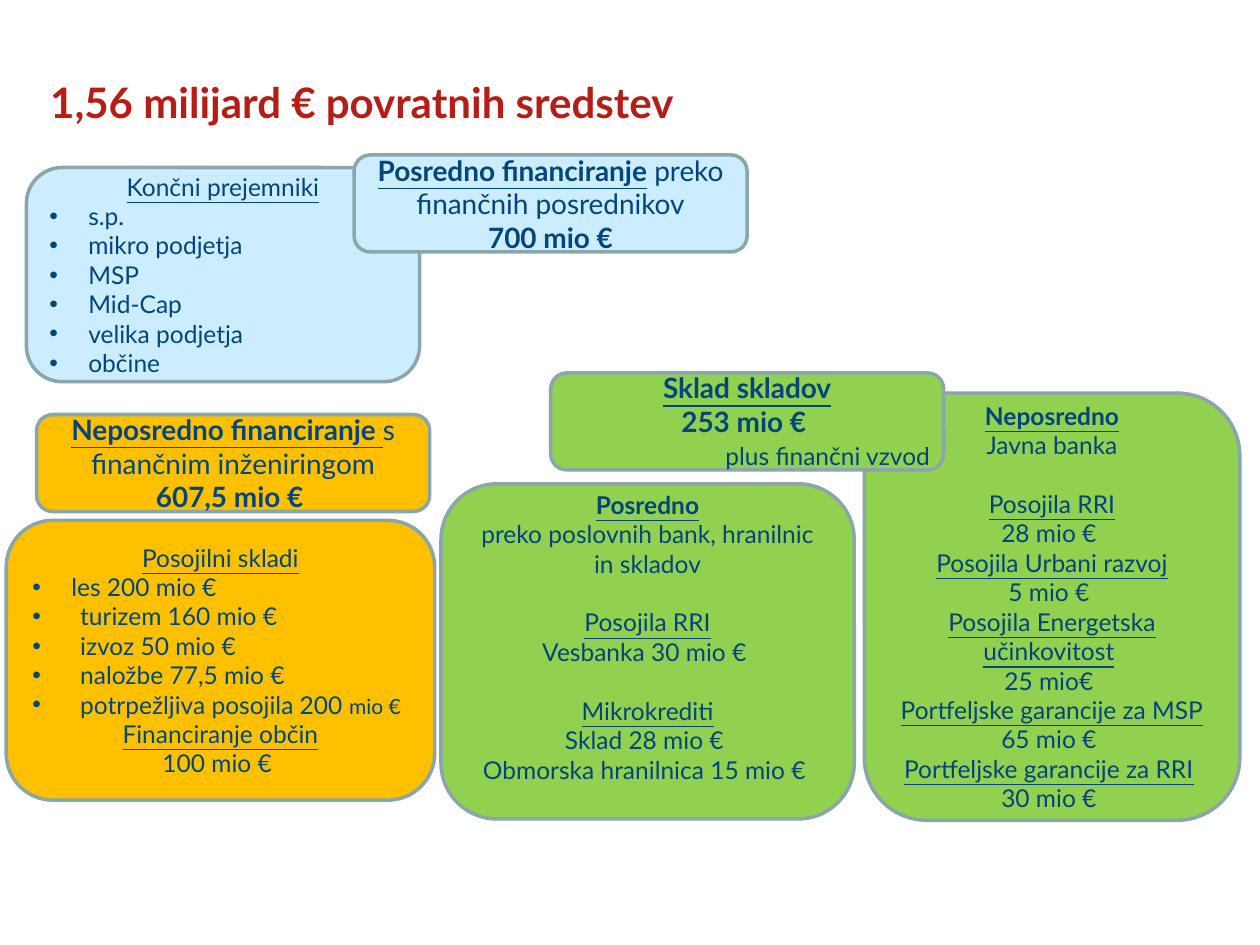
from dataclasses import dataclass

from lxml import etree
from pptx import Presentation
from pptx.dml.color import RGBColor
from pptx.enum.shapes import MSO_SHAPE
from pptx.enum.text import MSO_ANCHOR, PP_ALIGN
from pptx.oxml.ns import qn
from pptx.util import Inches, Pt

ROUNDED = MSO_SHAPE.ROUNDED_RECTANGLE
MIDDLE, TOP = MSO_ANCHOR.MIDDLE, MSO_ANCHOR.TOP
LEFT, CENTER = PP_ALIGN.LEFT, PP_ALIGN.CENTER

FONT = "Lato"
NAVY, RED, GREY = "00457C", "B51E17", "8AA6A8"
BLUE, ORANGE, GREEN = "CCECFF", "FFC000", "92D050"
BODY, HEAD = 14, 16
LINE_GAP = 1.2 * BODY
HEAD_W, HEAD_H = 3.12, 0.77


@dataclass
class Span:
    text: str
    bold: bool = False
    underline: bool = False
    size: int = 0


@dataclass
class Para:
    spans: list[Span]
    indent: float = 0
    before: float = 0


@dataclass
class Panel:
    left: float
    top: float
    width: float
    height: float
    fill: str
    size: int
    paras: list[Para]
    bottom_inset: float = 0.05


def rgb(value: str) -> RGBColor:
    return RGBColor.from_string(value)


def plain(text: str) -> Para:
    return Para([Span(text)])


def under(text: str, before: float = 0, bold: bool = False) -> Para:
    return Para([Span(text, bold, True)], before=before)


def strong(text: str) -> Para:
    return Para([Span(text, True)])


def bullets(items: list[str], indent: float) -> list[Para]:
    return [Para([Span(item)], indent) for item in items]


def add_bullet(p, indent: float) -> None:
    pPr = p._p.get_or_add_pPr()
    pPr.set("marL", str(Inches(indent)))
    pPr.set("indent", str(-Inches(indent)))
    etree.SubElement(pPr, qn("a:buFont")).set("typeface", "Arial")
    etree.SubElement(pPr, qn("a:buChar")).set("char", "•")


def write(tf, paras: list[Para], size: int, color: str = NAVY,
          align=CENTER, anchor=MIDDLE) -> None:
    """Fill a text frame; bulleted paragraphs are always left-aligned."""
    tf.word_wrap = True
    tf.vertical_anchor = anchor
    for i, para in enumerate(paras):
        p = tf.add_paragraph() if i else tf.paragraphs[0]
        p.alignment = LEFT if para.indent else align
        if para.before:
            p.space_before = Pt(para.before)
        if para.indent:
            add_bullet(p, para.indent)
        for span in para.spans:
            r = p.add_run()
            r.text = span.text
            r.font.name = FONT
            r.font.size = Pt(span.size or size)
            r.font.bold = span.bold
            r.font.underline = span.underline
            r.font.color.rgb = rgb(color)


def add_panel(s, panel: Panel) -> None:
    sp = s.shapes.add_shape(ROUNDED, Inches(panel.left), Inches(panel.top),
                            Inches(panel.width), Inches(panel.height))
    sp.shadow.inherit = False
    sp.fill.solid()
    sp.fill.fore_color.rgb = rgb(panel.fill)
    sp.line.color.rgb = rgb(GREY)
    sp.line.width = Pt(2)
    sp.text_frame.margin_bottom = Inches(panel.bottom_inset)
    write(sp.text_frame, panel.paras, panel.size)


def add_label(s, left: float, top: float, width: float, height: float,
              span: Span, color: str, anchor) -> None:
    sp = s.shapes.add_textbox(Inches(left), Inches(top), Inches(width), Inches(height))
    write(sp.text_frame, [Para([span])], span.size, color, LEFT, anchor)


PANELS = [
    Panel(0.29, 3.29, HEAD_W, HEAD_H, ORANGE, HEAD, [
        Para([Span("Neposredno financiranje ", True, True),
              Span("s finančnim inženiringom "),
              Span("607,5 mio € ", True)]),
    ]),
    Panel(0.05, 4.13, 3.4, 2.22, ORANGE, BODY, [
        under("Posojilni skladi"),
        *bullets(["les 200 mio €"], 0.31),
        *bullets(["turizem 160 mio €", "izvoz 50 mio €", "naložbe 77,5 mio €"], 0.38),
        Para([Span("potrpežljiva posojila 200 "), Span("mio €", size=12)], 0.38),
        under("Financiranje občin"),
        plain("100 mio € "),
    ]),
    Panel(0.21, 1.33, HEAD_W, 1.7, BLUE, BODY, [
        under("Končni prejemniki"),
        *bullets(["s.p.", "mikro podjetja", "MSP", "Mid-Cap",
                  "velika podjetja", "občine"], 0.31),
    ]),
    Panel(3.5, 3.84, 3.28, 2.66, GREEN, BODY, [
        under("Posredno", bold=True),
        plain("preko poslovnih bank, hranilnic in skladov"),
        under("Posojila RRI", LINE_GAP),
        plain("Vesbanka 30 mio € "),
        under("Mikrokrediti", LINE_GAP),
        plain("Sklad 28 mio € "),
        plain("Obmorska hranilnica 15 mio € "),
    ], bottom_inset=0.28),
    Panel(6.86, 3.12, 2.98, 3.39, GREEN, BODY, [
        under("Neposredno", bold=True),
        plain("Javna banka"),
        under("Posojila RRI", LINE_GAP),
        plain("28 mio € "),
        under("Posojila Urbani razvoj"),
        plain("5 mio € "),
        Para([Span("Posojila Energetska učinkovitost", underline=True), Span(" ")]),
        plain("25 mio€ "),
        Para([Span("Portfeljske garancije za MSP", underline=True), Span(" 65 mio € ")]),
        Para([Span("Portfeljske garancije za RRI", underline=True), Span(" ")]),
        plain("30 mio € "),
    ]),
    Panel(2.81, 1.23, HEAD_W, HEAD_H, BLUE, HEAD, [
        Para([Span("Posredno financiranje", True, True),
              Span(" preko finančnih posrednikov")]),
        strong("700 mio €"),
    ]),
    Panel(4.37, 2.96, HEAD_W, HEAD_H, GREEN, HEAD, [
        under("Sklad skladov", bold=True),
        strong("253 mio € "),
    ], bottom_inset=0.32),
]


def main() -> None:
    prs = Presentation()
    prs.slide_width, prs.slide_height = Inches(10), Inches(7.5)
    s = prs.slides.add_slide(prs.slide_layouts[6])
    add_label(s, 0.3, 0.37, 8.86, 0.87,
              Span("1,56 milijard € povratnih sredstev", True, size=24), RED, MIDDLE)
    for panel in PANELS:
        add_panel(s, panel)
    add_label(s, 5.66, 3.45, 2.76, 0.34,
              Span("plus finančni vzvod", size=BODY), NAVY, TOP)
    prs.save("out.pptx")


if __name__ == "__main__":
    main()
